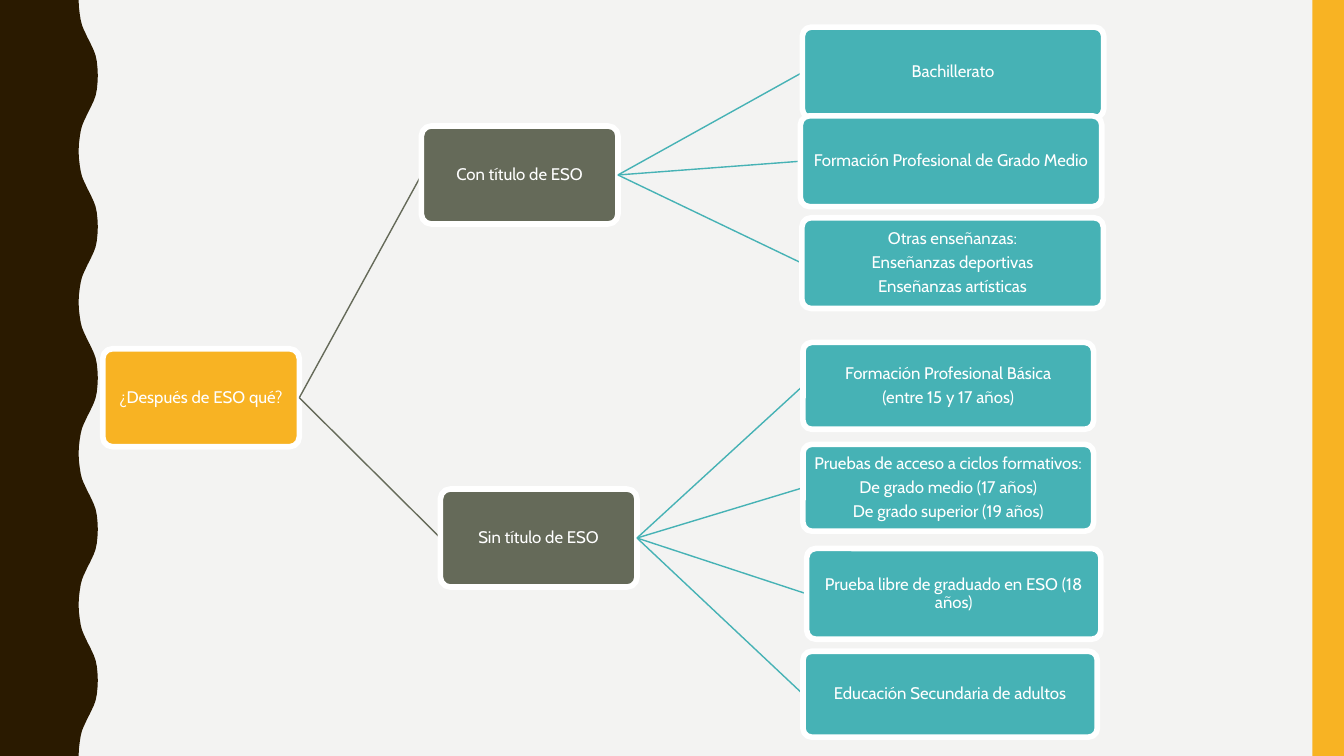
from dataclasses import dataclass

from lxml.etree import SubElement
from pptx import Presentation
from pptx.dml.color import RGBColor
from pptx.enum.shapes import MSO_CONNECTOR as Connector, MSO_SHAPE as Preset
from pptx.enum.text import MSO_ANCHOR as Anchor, PP_ALIGN as Align
from pptx.oxml.ns import qn
from pptx.shapes.autoshape import Shape
from pptx.slide import Slide
from pptx.util import Pt

PAPER = RGBColor(0xF3, 0xF3, 0xF2)
BROWN = RGBColor(0x2A, 0x1A, 0x00)
AMBER = RGBColor(0xF8, 0xB3, 0x23)
OLIVE = RGBColor(0x65, 0x6A, 0x59)
TEAL = RGBColor(0x46, 0xB2, 0xB5)
WHITE = RGBColor(0xFF, 0xFF, 0xFF)

SLIDE_WIDTH, SLIDE_HEIGHT = 960, 540
WAVE_PERIOD, WAVE_COUNT = 108, 5
# Half of one wave, from trough to crest: (x, y)
HALF_WAVE = [
    (56.2, 0), (56.4, 5), (57, 10), (57.7, 14.4), (58.6, 18), (59.8, 21),
    (61.2, 24), (62.6, 27), (64.2, 30), (65.6, 33), (67, 36), (68.3, 39.6),
    (69.2, 44), (69.7, 49), (69.9, 54),
]


@dataclass(frozen=True)
class Node:
    """One box of the tree, with the boxes it leads to."""
    text: str
    left: float
    top: float
    width: float
    height: float
    color: RGBColor
    children: tuple["Node", ...] = ()

    @property
    def middle(self) -> float:
        return self.top + self.height / 2


def branch(text: str, left: float, top: float, color: RGBColor, *children: Node) -> Node:
    return Node(text, left, top, 140.4, 70, color, children)


def leaf(text: str, left: float, top: float, width: float, height: float) -> Node:
    return Node(text, left, top, width, height, TEAL)


TREE = branch(
    "¿Después de ESO qué?", 73.4, 249.1, AMBER,
    branch(
        "Con título de ESO", 301, 90, OLIVE,
        leaf("Bachillerato", 573.1, 19.4, 215.3, 64.8),
        leaf("Formación Profesional de Grado Medio", 571.7, 82.8, 215.3, 64.8),
        leaf("Otras enseñanzas:\nEnseñanzas deportivas\nEnseñanzas artísticas",
             572.8, 155.6, 215.3, 64.8),
    ),
    branch(
        "Sin título de ESO", 314.6, 349.3, OLIVE,
        leaf("Formación Profesional Básica\n(entre 15 y 17 años)",
             573.6, 244.6, 207.6, 62),
        leaf("Pruebas de acceso a ciclos formativos:\nDe grado medio (17 años)\n"
             "De grado superior (19 años)", 573.6, 317.4, 207.6, 62),
        leaf("Prueba libre de graduado en ESO (18 años)", 576.2, 391.8, 210.2, 64.8),
        leaf("Educación Secundaria de adultos", 573.6, 465.2, 210.2, 61.3),
    ),
)


def paint(shape: Shape, color: RGBColor) -> None:
    shape.shadow.inherit = False
    shape.fill.solid()
    shape.fill.fore_color.rgb = color
    shape.line.fill.background()


def write(shape: Shape, text: str, *, size: float = 12, font: str = "Cabin",
          color: RGBColor = WHITE, inset: float = 0.7, after: float = 4.2) -> None:
    frame = shape.text_frame
    frame.word_wrap = True
    frame.vertical_anchor = Anchor.MIDDLE
    frame.margin_left = frame.margin_right = Pt(inset)
    frame.margin_top = frame.margin_bottom = Pt(inset)
    for index, line in enumerate(text.split("\n")):
        paragraph = frame.add_paragraph() if index else frame.paragraphs[0]
        paragraph.alignment = Align.CENTER
        paragraph.line_spacing = 0.9
        paragraph.space_after = Pt(after)
        run = paragraph.add_run()
        run.text = line
        run.font.size, run.font.name = Pt(size), font
        run.font.color.rgb = color


def draw_wave(slide: Slide) -> None:
    crest_to_trough = [(x, WAVE_PERIOD - y) for x, y in reversed(HALF_WAVE[:-1])]
    wave = HALF_WAVE + crest_to_trough
    edge = [(Pt(x), Pt(y + WAVE_PERIOD * count))
            for count in range(WAVE_COUNT) for x, y in wave]
    builder = slide.shapes.build_freeform(0, 0, scale=1.0)
    builder.add_line_segments(edge + [(0, Pt(SLIDE_HEIGHT))], close=True)
    paint(builder.convert_to_shape(), BROWN)


def draw_link(slide: Slide, parent: Node, child: Node) -> None:
    link = slide.shapes.add_connector(
        Connector.STRAIGHT, Pt(parent.left + parent.width), Pt(parent.middle),
        Pt(child.left), Pt(child.middle))
    link.line.color.rgb = child.color
    link.line.width = Pt(1)
    SubElement(link._element.spPr, qn("a:effectLst"))


def draw_tree(slide: Slide, node: Node) -> None:
    box = slide.shapes.add_shape(Preset.ROUNDED_RECTANGLE, Pt(node.left), Pt(node.top),
                                 Pt(node.width), Pt(node.height))
    box.adjustments[0] = 0.1
    paint(box, node.color)
    box.line.color.rgb = WHITE
    box.line.width = Pt(4)
    write(box, node.text)
    for child in node.children:
        draw_link(slide, node, child)
        draw_tree(slide, child)


def main() -> None:
    presentation = Presentation()
    presentation.slide_width = Pt(SLIDE_WIDTH)
    presentation.slide_height = Pt(SLIDE_HEIGHT)
    slide = presentation.slides.add_slide(presentation.slide_layouts[6])

    # Background and side bands
    slide.background.fill.solid()
    slide.background.fill.fore_color.rgb = PAPER
    draw_wave(slide)
    band = slide.shapes.add_shape(Preset.RECTANGLE, Pt(937.5), 0,
                                  Pt(22.5), Pt(SLIDE_HEIGHT))
    paint(band, AMBER)

    # Tree of study options
    draw_tree(slide, TREE)
    presentation.save("out.pptx")


if __name__ == "__main__":
    main()
